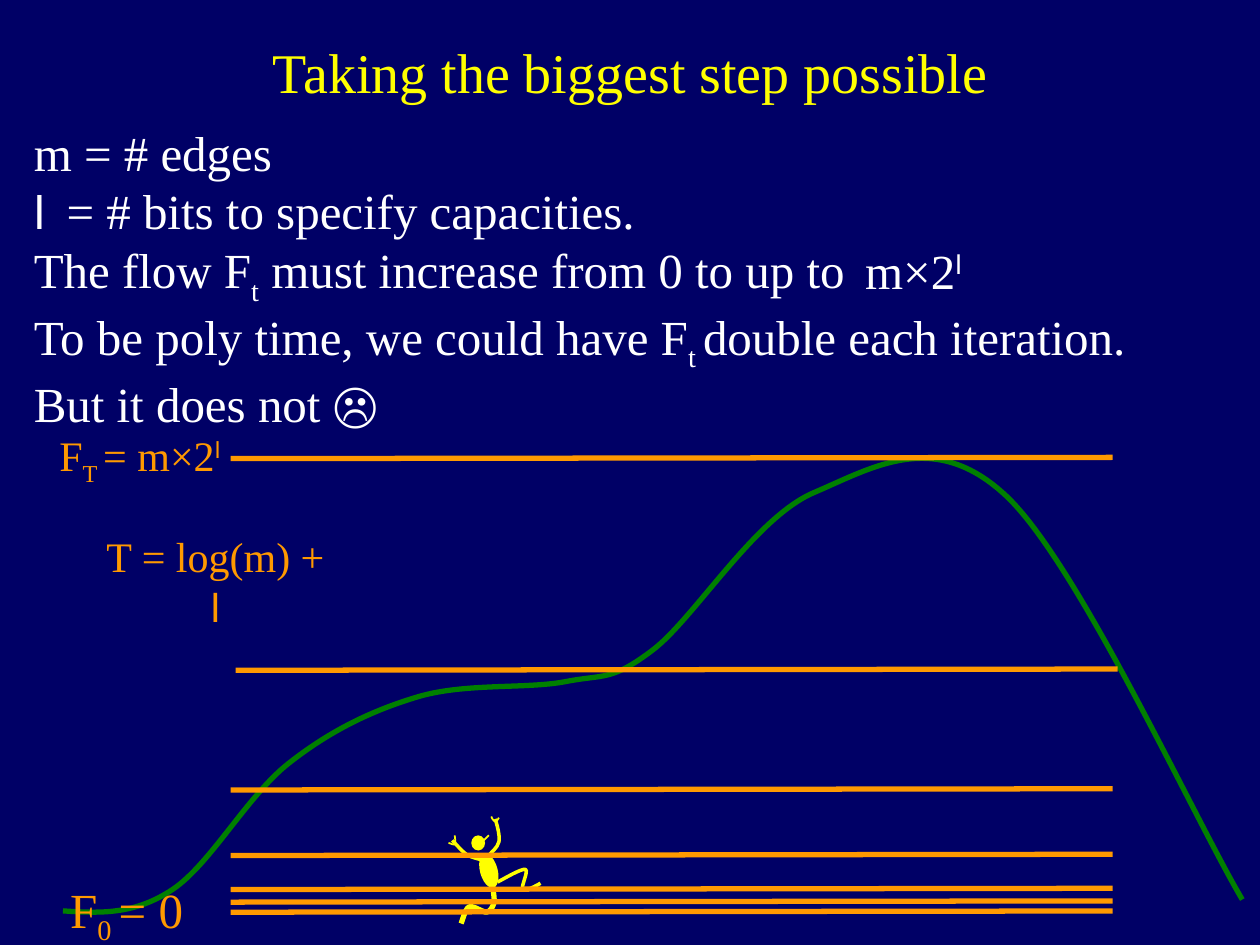
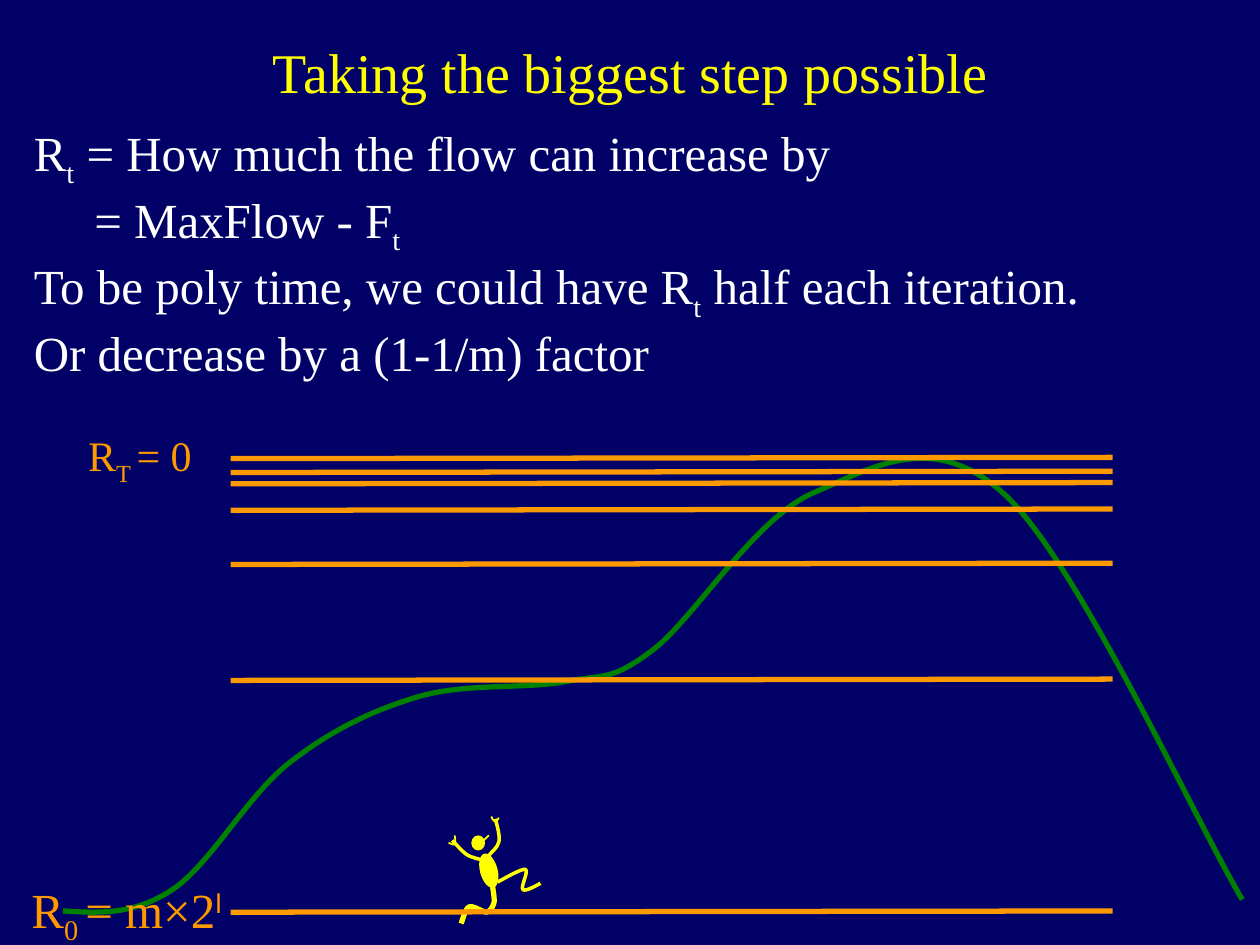
"""Build two slides on how the flow grows, each a hill with level lines."""
from pptx import Presentation
from pptx.dml.color import RGBColor
from pptx.enum.shapes import MSO_CONNECTOR, MSO_SHAPE
from pptx.enum.text import MSO_AUTO_SIZE, PP_ALIGN
from pptx.oxml.xmlchemy import OxmlElement
from pptx.util import Pt

PX = 9144
NAVY = RGBColor(0x00, 0x00, 0x66)
YELLOW = RGBColor(0xFF, 0xFF, 0x00)
WHITE = RGBColor(0xFF, 0xFF, 0xFF)
ORANGE = RGBColor(0xFF, 0x99, 0x00)
GREEN = RGBColor(0x00, 0x80, 0x00)
SERIF, SANS = "Times New Roman", "Calibri"

MARKS = {"_": (SERIF, -25000), "^": (SANS, 30000), "~": (SANS, 0)}

TITLE = "Taking the biggest step possible"
SLIDES = [
    {
        "body": [
            "m = # edges",
            "~l|\t= # bits to specify capacities.",
            "The flow F|_t| must increase from 0 to up to",
            "To be poly time, we could have F|_t |double each iteration.",
            "But it does not ☹",
        ],
        "tab": 26,
        "notes": [
            ("F|_0 |= 0", (44, 693, 113), 28, ORANGE),
            ("F|_T |= m×2|^l", (35, 336, 152), 24, ORANGE),
            ("m×2|^l", (676, 186, 98), 28, WHITE),
            ("T = log(m) + |~l", (67, 416, 208), 24, ORANGE),
        ],
        "levels": [364, 532, 627, 679, 706, 716, 724],
    },
    {
        "body": [
            "R|_t| = How much the flow can increase by",
            "\t= MaxFlow - F|_t",
            "To be poly time, we could have R|_t| half each iteration.",
            "Or decrease by a (1-1/m) factor",
        ],
        "tab": 48,
        "notes": [
            ("R|_0 |= m×2|^l", (13, 693, 175), 28, ORANGE),
            ("R|_T |= 0", (59, 336, 104), 24, ORANGE),
        ],
        "levels": [364, 375, 384, 405, 448, 540, 724],
    },
]
LEFT, SPAN, RISE = 183, 700, 1
SHIFT = {532: 4}

HILL = [(-43, 694), (50, 723), (137, 706), (229, 606), (332, 553), (449, 541),
        (518, 516), (646, 391), (799, 394), (986, 714), (1033, 790)]

LIMBS = [
    (2, [(384, 683), (370, 678), (359, 667)]),
    (1, [(356, 669), (361, 670), (361, 663)]),
    (2, [(388, 679), (396, 668), (393, 650)]),
    (1, [(390, 648), (393, 652), (396, 649)]),
    (2, [(395, 700), (417, 690), (415, 706), (429, 701)]),
    (3, [(391, 703), (392, 717), (386, 724), (372, 720), (366, 733)]),
    (1, [(384, 667), (388, 663)]),
]
OVALS = [((374, 663, 11, 12), 0), ((381, 677, 14, 28), -15)]


def write(slide, spot, lines, size=28, color=WHITE, align=PP_ALIGN.CENTER,
          wrap=False, tab=None):
    high = (size * 7 // 4 + 8) * len(lines)
    frame = slide.shapes.add_textbox(*(v * PX for v in (*spot, high))).text_frame
    frame.word_wrap = wrap
    frame.auto_size = MSO_AUTO_SIZE.SHAPE_TO_FIT_TEXT
    for i, line in enumerate(lines):
        para = frame.paragraphs[0] if i == 0 else frame.add_paragraph()
        para.alignment = align
        if tab and "\t" in line:
            stops, stop = OxmlElement("a:tabLst"), OxmlElement("a:tab")
            stop.set("pos", str(tab * PX))
            stop.set("algn", "l")
            stops.append(stop)
            para._p.get_or_add_pPr().append(stops)
        for part in line.split("|"):
            face, base = MARKS.get(part[0], (SERIF, 0))
            run = para.add_run()
            run.text = part[1:] if part[0] in MARKS else part
            run.font.name, run.font.size = face, Pt(size)
            run.font.color.rgb = color
            if base:
                run.font._element.set("baseline", str(base))


def lean(knot, prior, after):
    return tuple(k + (a - p) / 6 for k, p, a in zip(knot, prior, after))


def draw_curve(shapes, knots, color, width):
    """Draw a smooth line through all knots but the first and last, which steer it."""
    pen = shapes.build_freeform(*knots[1], scale=PX)
    for a, b, c, d in zip(knots, knots[1:], knots[2:], knots[3:]):
        pen.add_line_segments([lean(b, a, c), lean(c, d, b), c], close=False)
    shape = pen.convert_to_shape()
    shape.shadow.inherit = False
    shape.fill.background()
    shape.line.color.rgb, shape.line.width = color, Pt(width)
    legs = shape._element.xpath(".//a:lnTo")
    for i in range(0, len(legs), 3):
        curve = OxmlElement("a:cubicBezTo")
        legs[i].addprevious(curve)
        for leg in legs[i:i + 3]:
            curve.append(leg[0])
            leg.getparent().remove(leg)


def draw_climber(slide):
    shapes = slide.shapes.add_group_shape().shapes
    for width, knots in LIMBS:
        draw_curve(shapes, [knots[0], *knots, knots[-1]], YELLOW, width)
    for box, turn in OVALS:
        oval = shapes.add_shape(MSO_SHAPE.OVAL, *(v * PX for v in box))
        oval.rotation = turn
        oval.shadow.inherit = False
        oval.fill.solid()
        oval.fill.fore_color.rgb = YELLOW
        oval.line.fill.background()


def draw_level(slide, y):
    x = LEFT + SHIFT.get(y, 0)
    ends = (x, y, x + SPAN, y - RISE)
    line = slide.shapes.add_connector(
        MSO_CONNECTOR.STRAIGHT, *(v * PX for v in ends))
    line.line.color.rgb, line.line.width = ORANGE, Pt(3)
    line._element.spPr.append(OxmlElement("a:effectLst"))


def main():
    deck = Presentation()
    deck.slide_width, deck.slide_height = 1000 * PX, 750 * PX
    for page in SLIDES:
        slide = deck.slides.add_slide(deck.slide_layouts[6])
        slide.background.fill.solid()
        slide.background.fill.fore_color.rgb = NAVY
        draw_curve(slide.shapes, HILL, GREEN, 3)
        draw_climber(slide)
        write(slide, (17, 92, 933), page["body"], align=PP_ALIGN.LEFT,
              wrap=True, tab=page["tab"])
        write(slide, (204, 25, 593), [TITLE], size=32, color=YELLOW)
        for line, spot, size, color in page["notes"]:
            write(slide, spot, [line], size=size, color=color)
        for y in page["levels"]:
            draw_level(slide, y)
    deck.save("out.pptx")


if __name__ == "__main__":
    main()
